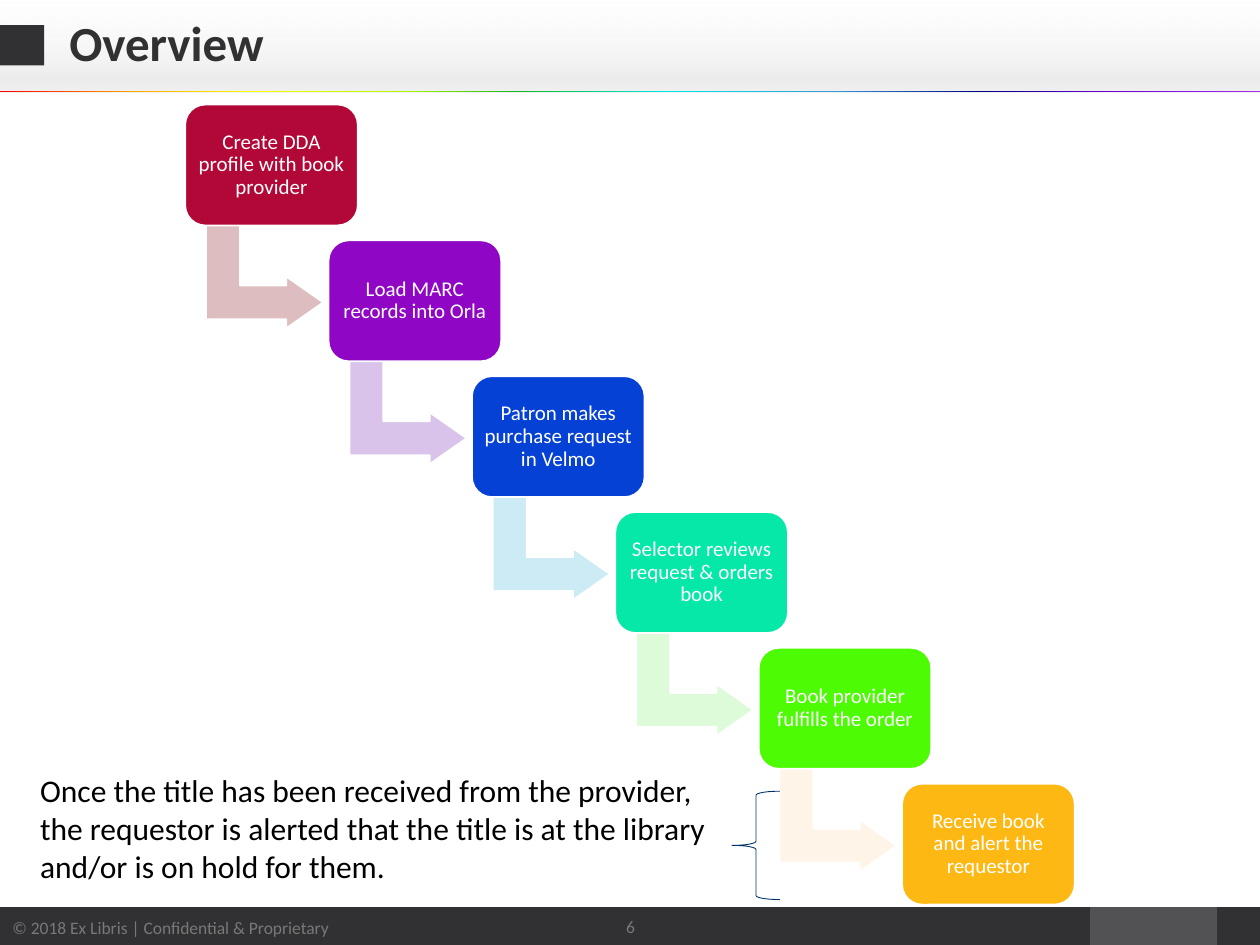
from dataclasses import dataclass

from lxml.etree import SubElement as Sub
from pptx import Presentation
from pptx.dml.color import RGBColor as Rgb
from pptx.enum.shapes import MSO_SHAPE as Kind
from pptx.enum.text import MSO_ANCHOR as Anchor, MSO_AUTO_SIZE as Fit, PP_ALIGN as Align
from pptx.oxml.ns import qn
from pptx.util import Inches, Pt


@dataclass(frozen=True)
class Theme:
    font: str = "Calibri"
    dark: str = "313133"
    mid: str = "525254"
    grey: str = "787878"
    white: str = "FFFFFF"
    black: str = "000000"
    navy: str = "003466"
    title: int = 28
    note: int = 18
    step: int = 12
    foot: int = 10


THEME = Theme()

GLOSS = [(0, "FAFAFA", 12), (66, "D7D7D7", 30), (83, "D7D7D7", 47), (100, "E4E4E4", 54)]
RAINBOW = [
    (0, "A22DE8", 100), (12, "7200D1", 100), (22, "000086", 100), (34, "399CDB", 100),
    (47, "00E9E8", 100), (59, "11B920", 100), (68, "B1F900", 100), (80, "FFFF00", 100),
    (89, "FFAB00", 100), (100, "FF0000", 100),
]
STEPS = [
    ("Create DDA profile with book provider", "B20837", "DDBDBF"),
    ("Load MARC records into Orla", "8F07C4", "D9C3EA"),
    ("Patron makes purchase request in Velmo", "0641D6", "CCEBF4"),
    ("Selector reviews request & orders book", "05E8A7", "DDFBD9"),
    ("Book provider fulfills the order", "4CFB04", "FFF4E8"),
    ("Receive book and alert the requestor", "FDB813", None),
]
FIRST, LAST = (1.47, 0.83), (7.16, 6.22)


def place(box):
    return [Inches(n) for n in box]


def write(shape, text, size, color, align=Align.LEFT, anchor=Anchor.MIDDLE, space=None, bold=False):
    frame = shape.text_frame
    frame.word_wrap = True
    frame.vertical_anchor = anchor
    frame.text = text
    para = frame.paragraphs[0]
    para.alignment = align
    if space:
        para.line_spacing = space
    font = para.font
    font.name, font.size, font.bold = THEME.font, Pt(size), bold
    font.color.rgb = Rgb.from_string(color)


def draw(slide, kind, box, fill=None, line=None, width=1):
    shape = slide.shapes.add_shape(kind, *place(box))
    shape.shadow.inherit = False
    if fill:
        shape.fill.solid()
        shape.fill.fore_color.rgb = Rgb.from_string(fill)
    else:
        shape.fill.background()
    if line:
        shape.line.color.rgb = Rgb.from_string(line)
        shape.line.width = Pt(width)
    else:
        shape.line.fill.background()
    return shape


def blend(shape, stops, angle):
    shape.fill.gradient()
    grad = shape.element.spPr.find(qn("a:gradFill"))
    for part in list(grad):
        grad.remove(part)
    group = Sub(grad, qn("a:gsLst"))
    for pos, color, alpha in stops:
        stop = Sub(group, qn("a:gs"), pos=str(pos * 1000))
        tone = Sub(stop, qn("a:srgbClr"), val=color)
        if alpha < 100:
            Sub(tone, qn("a:alpha"), val=str(alpha * 1000))
    Sub(grad, qn("a:lin"), ang=str(angle * 60000), scaled="0")


def add_frame(slide):
    draw(slide, Kind.RECTANGLE, (8.65, 7.2, 1.01, 0.32), THEME.mid)
    draw(slide, Kind.RECTANGLE, (9.66, 7.2, 0.35, 0.32), THEME.dark)
    blend(draw(slide, Kind.RECTANGLE, (-0.01, 0.01, 10.01, 0.72)), GLOSS, 90)
    foot = draw(slide, Kind.RECTANGLE, (0, 7.2, 8.65, 0.32), THEME.dark)
    write(foot, "© 2018 Ex Libris | Confidential & Proprietary", THEME.foot, THEME.grey)
    draw(slide, Kind.RECTANGLE, (0, 0.2, 0.35, 0.32), THEME.dark)
    blend(draw(slide, Kind.RECTANGLE, (0, 0.72, 10, 0.01)), RAINBOW, 180)


def add_title(slide, text):
    title = slide.shapes.title
    title.left, title.top, title.width, title.height = place((0.45, 0.02, 9.06, 0.69))
    write(title, text, THEME.title, THEME.dark, space=0.9, bold=True)
    title.text_frame.auto_size = Fit.NONE
    title.element.getparent().append(title.element)


def add_text(slide, box, text, size, color, **style):
    write(slide.shapes.add_textbox(*place(box)), text, size, color, **style)


def add_arrow(slide, left, top, fill):
    arrow = draw(slide, Kind.BENT_UP_ARROW, (left, top, 0.82, 0.93), fill, THEME.white)
    arrow.rotation = 90
    for i, value in enumerate((0.328, 0.25, 0.358)):
        arrow.adjustments[i] = value


def add_step(slide, left, top, text, fill):
    step = draw(slide, Kind.ROUNDED_RECTANGLE, (left, top, 1.37, 0.96), fill, THEME.white)
    frame = step.text_frame
    frame.margin_left = frame.margin_right = Inches(0.05)
    frame.margin_top = frame.margin_bottom = Inches(0.05)
    write(step, text, THEME.step, THEME.white, align=Align.CENTER, space=0.9)


def add_stairs(slide):
    dx, dy = [(end - start) / (len(STEPS) - 1) for start, end in zip(FIRST, LAST)]
    for i, (text, fill, tint) in enumerate(STEPS):
        left, top = FIRST[0] + i * dx, FIRST[1] + i * dy
        if tint:
            add_arrow(slide, left + 0.22, top + 0.9, tint)
        add_step(slide, left, top, text, fill)


def main():
    deck = Presentation()
    deck.slide_width, deck.slide_height = Inches(10), Inches(7.5)
    slide = deck.slides.add_slide(deck.slide_layouts[5])
    add_frame(slide)
    add_title(slide, "Overview")
    add_text(slide, (4.42, 7.16, 1.17, 0.39), "6", THEME.foot, THEME.grey, align=Align.CENTER)
    add_stairs(slide)
    draw(slide, Kind.LEFT_BRACE, (5.81, 6.28, 0.38, 0.86), line=THEME.navy, width=0.5)
    note = (
        "Once the title has been received from the provider, the requestor is alerted "
        "that the title is at the library and/or is on hold for them."
    )
    add_text(slide, (0.22, 6.07, 5.59, 1.01), note, THEME.note, THEME.black, anchor=Anchor.TOP)
    deck.save("out.pptx")


if __name__ == "__main__":
    main()
